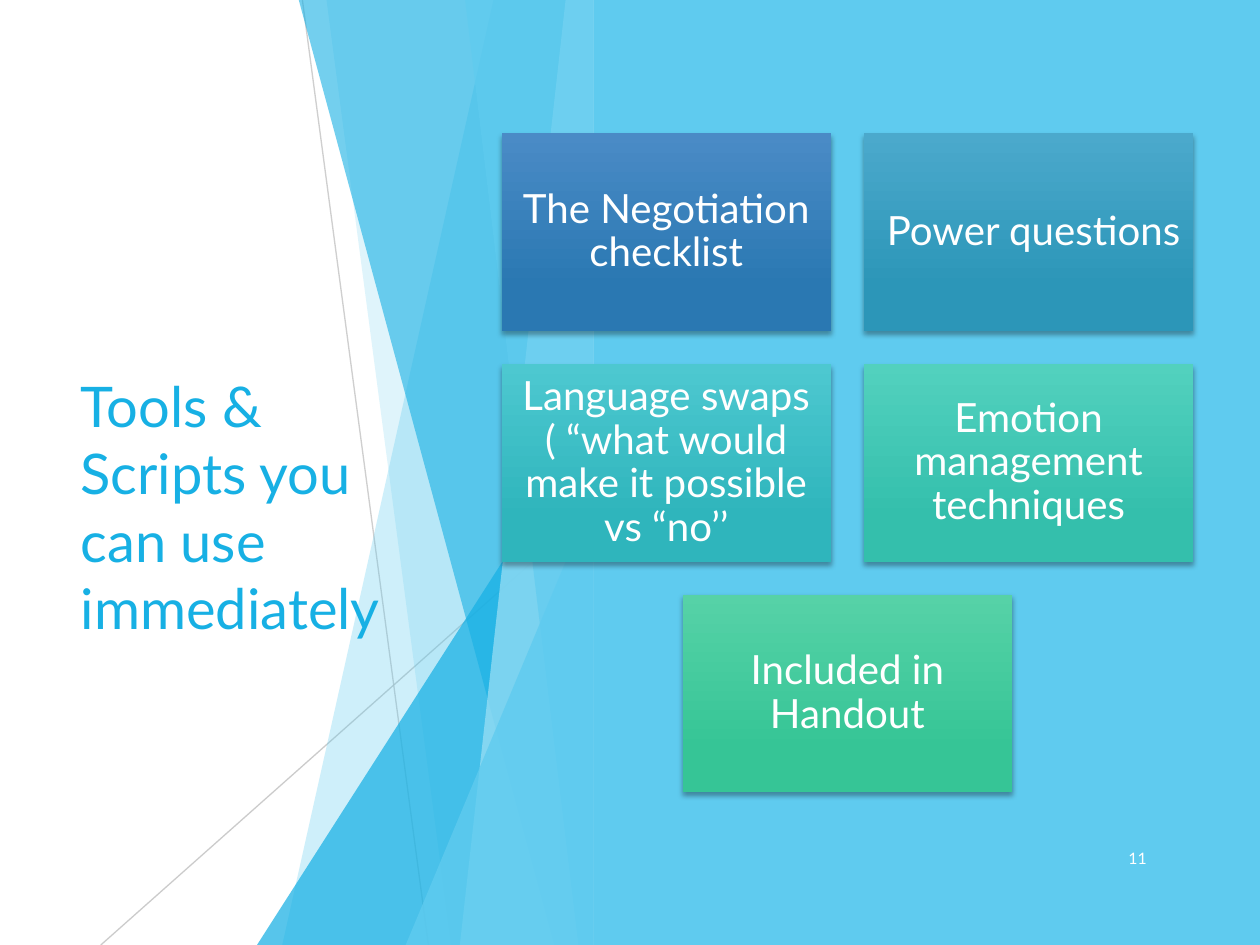
from lxml import etree
from pptx import Presentation
from pptx.dml.color import RGBColor
from pptx.enum.shapes import MSO_CONNECTOR, MSO_SHAPE
from pptx.enum.text import MSO_ANCHOR, MSO_AUTO_SIZE, PP_ALIGN
from pptx.oxml.ns import qn
from pptx.util import Pt

RECT, TRIANGLE = MSO_SHAPE.RECTANGLE, MSO_SHAPE.ISOSCELES_TRIANGLE
STRAIGHT = MSO_CONNECTOR.STRAIGHT
MIDDLE = MSO_ANCHOR.MIDDLE
LEFT, CENTER, RIGHT = PP_ALIGN.LEFT, PP_ALIGN.CENTER, PP_ALIGN.RIGHT
FONT = "Lato"
COLORS = {"sky": "5FCBEF", "blue": "17B0E4", "pale": "9FE0F5",
          "grey": "BFBFBF", "white": "FFFFFF"}


def paint(shape, fill, color, alpha=100):
    fill.solid()
    fill.fore_color.rgb = RGBColor.from_string(COLORS[color])
    if alpha < 100:
        clr = shape.element.spPr.find(".//" + qn("a:srgbClr"))
        etree.SubElement(clr, qn("a:alpha"), val=str(alpha * 1000))


def write(shape, text, size, color, align, inset=7.2):
    tf = shape.text_frame
    tf.text = text
    tf.word_wrap = True
    tf.auto_size = MSO_AUTO_SIZE.NONE
    tf.vertical_anchor = MIDDLE
    tf.margin_left = tf.margin_right = Pt(7.2)
    tf.margin_top = tf.margin_bottom = Pt(inset)
    p = tf.paragraphs[0]
    p.alignment = align
    r = p.runs[0]
    r.font.name = FONT
    r.font.size = Pt(size)
    r.font.color.rgb = RGBColor.from_string(COLORS[color])
    return p


prs = Presentation()
prs.slide_width, prs.slide_height = Pt(720), Pt(540)
s = prs.slides.add_slide(prs.slide_layouts[5])

for x1, y1, x2, y2, alpha in [(172.8, 0, 244.8, 540, 75), (339.1, 290.2, 57.6, 540, 80)]:
    line = s.shapes.add_connector(STRAIGHT, Pt(x1), Pt(y1), Pt(x2), Pt(y2))
    line.line.width = Pt(0.75)
    paint(line, line.line.fill, "grey", alpha)
    etree.SubElement(line.element.spPr, qn("a:effectLst"))

EDGE, TOP, BOTTOM = 339.1, -0.6, 540
facets = [
    ("band", 282.2, 161.3, "sky", 30),
    ("band", 186.5, 257.8, "sky", 20),
    ("triangle", 146.9, 239.8, "blue", 72),
    ("band", 170.6, 316.8, "blue", 60),
    ("band", 323.3, 262.8, "pale", 70),
    ("band", 265.7, 330.5, "sky", 65),
    ("triangle", 231.8, 283, "sky", 80),
]
for kind, a, b, color, alpha in facets:
    if kind == "band":
        fb = s.shapes.build_freeform(Pt(a), Pt(TOP))
        fb.add_line_segments([(Pt(x), Pt(y)) for x, y in
                              [(EDGE, TOP), (EDGE, BOTTOM), (b, BOTTOM)]])
        facet = fb.convert_to_shape()
    else:
        facet = s.shapes.add_shape(TRIANGLE, Pt(a), Pt(b), Pt(EDGE - a), Pt(BOTTOM - b))
        facet.adjustments[0] = 1
    paint(facet, facet.fill, color, alpha)
    facet.line.fill.background()
    facet.shadow.inherit = False

title = s.shapes.title
title.left, title.top, title.width, title.height = Pt(38.9), Pt(108.7), Pt(209.5), Pt(322.6)
write(title, "Tools & Scripts you can use immediately", 32, "blue", LEFT, 3.6)
title.text_frame.margin_top = Pt(42)
title.element.getparent().append(title.element)

panel = s.shapes.add_shape(RECT, Pt(EDGE), 0, Pt(720 - EDGE), Pt(540))
paint(panel, panel.fill, "sky")
panel.line.fill.background()
panel.shadow.inherit = False

number = s.shapes.add_textbox(Pt(622.1), Pt(475.9), Pt(40.3), Pt(28.8))
p = write(number, "11", 9, "white", RIGHT, 3.6)
p.space_after = Pt(6)

cards = [
    ("The Negotiation checklist", 0, 0, "4A8BC6", "2A78B2"),
    (" Power questions", 1, 0, "4BA9CC", "2C96B8"),
    ("Language swaps ( “what would make it possible vs “no’’", 0, 1, "4DC8D0", "2FB5BC"),
    ("Emotion management techniques", 1, 1, "52D1BE", "34BFAC"),
    ("Included in Handout", 0.5, 2, "56D2A7", "36C596"),
]
for text, col, row, light, dark in cards:
    card = s.shapes.add_shape(RECT, Pt(286.7 + 207 * col), Pt(76.2 + 131.8 * row),
                              Pt(188.2), Pt(112.9))
    card.fill.gradient()
    card.fill.gradient_angle = 270
    for stop, position, color in zip(card.fill.gradient_stops, (0, 0.78), (light, dark)):
        stop.position = position
        stop.color.rgb = RGBColor.from_string(color)
    card.line.fill.background()
    card.shadow.inherit = False
    effects = card.element.spPr.find(qn("a:effectLst"))
    shadow = etree.SubElement(effects, qn("a:outerShdw"), blurRad=str(Pt(3)), dist=str(Pt(2)),
                              dir="5400000", rotWithShape="0")
    clr = etree.SubElement(shadow, qn("a:srgbClr"), val="000000")
    etree.SubElement(clr, qn("a:alpha"), val="35000")
    p = write(card, text, 23, "white", CENTER)
    p.line_spacing = 0.9

prs.save("out.pptx")
